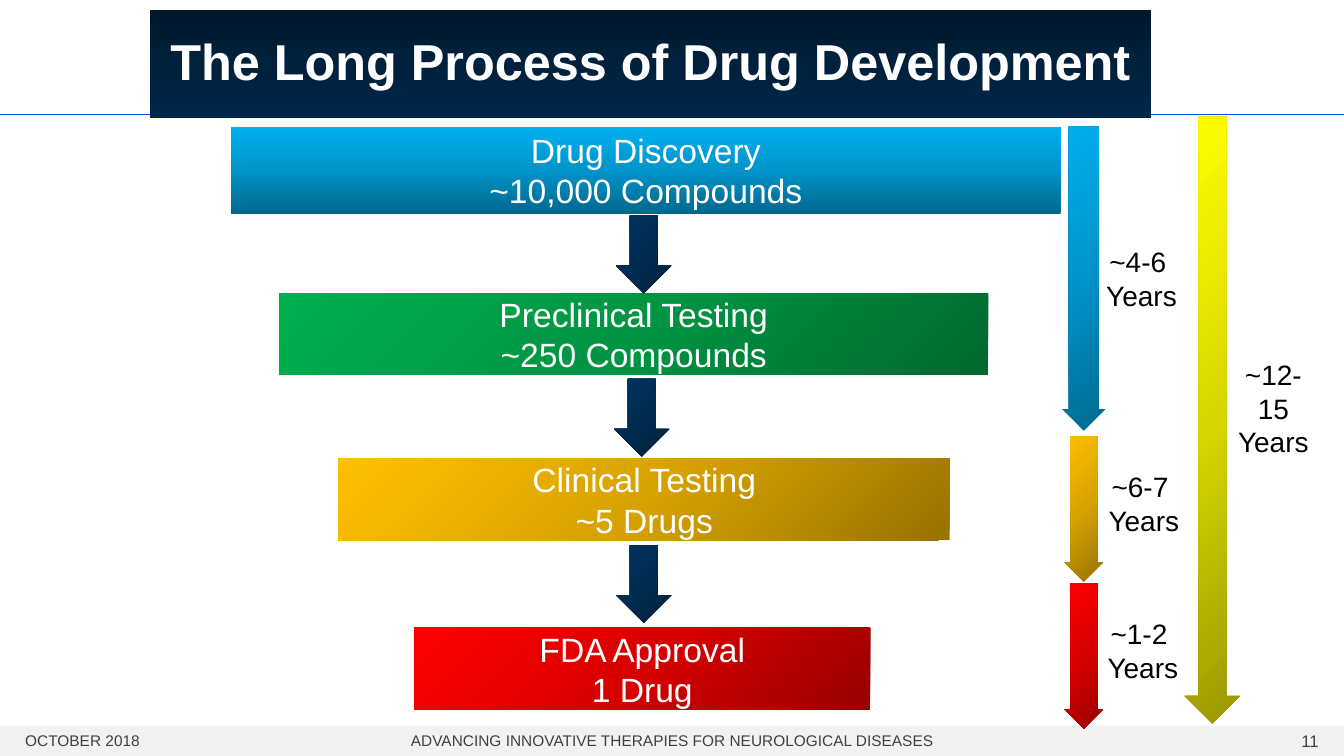
"""Build the drug development funnel slide with its timeline arrows."""
from copy import deepcopy
from dataclasses import dataclass

from pptx import Presentation
from pptx.dml.color import RGBColor
from pptx.enum.shapes import MSO_CONNECTOR, MSO_SHAPE
from pptx.enum.text import MSO_ANCHOR as ANCHOR, PP_ALIGN as ALIGN
from pptx.oxml.ns import qn
from pptx.oxml.xmlchemy import OxmlElement
from pptx.util import Inches, Pt


@dataclass(frozen=True)
class Theme:
    font: str = "Arial"
    title: int = 36
    stage: int = 24
    years: int = 20
    number: int = 12
    footer: int = 11
    white: str = "FFFFFF"
    black: str = "000000"
    grey: str = "404040"
    band: str = "F2F2F2"
    rule: str = "094DFF"
    title_fill: tuple = ("00172B", "00213D", "002749")
    navy: tuple = ("001F39", "002C52", "003461")
    blue: tuple = ("00688E", "0094CA", "00B0F0")
    green: tuple = ("00682F", "009443", "00B050")
    gold: tuple = ("977200", "D7A200", "FFC000")
    red: tuple = ("970000", "D70000", "FF0000")
    yellow: tuple = ("979700", "D7D700", "FFFF00")


T = Theme()
WIDTH, HEIGHT = 13.33, 7.5
BAND_TOP, BAND_H = 7.2, 0.3
RULE_Y = 1.13
DOWN, UP, DIAGONAL = 270, 90, 135

TITLE = "The Long Process of Drug Development"
TITLE_BOX = (1.49, 0.1, 9.93, 1.07)
STAGES = [
    (("Drug Discovery", "~10,000 Compounds"), (2.29, 1.26, 8.23, 0.86), T.blue, UP),
    (("Preclinical Testing", "~250 Compounds"), (2.77, 2.91, 7.03, 0.81), T.green, DIAGONAL),
    (("Clinical Testing", "~5 Drugs"), (3.36, 4.55, 6.06, 0.81), T.gold, DIAGONAL),
    (("FDA Approval", "1 Drug"), (4.11, 6.23, 4.52, 0.81), T.red, DIAGONAL),
]
STEP_SIZE = (0.55, 0.77)
STEPS = [(6.11, 2.14), (6.09, 3.76), (6.11, 5.41)]
SPANS = [
    ((10.54, 1.26, 0.42, 3.01), T.blue, 0.702),
    ((10.56, 4.33, 0.38, 1.44), T.gold, 0.702),
    ((10.56, 5.79, 0.38, 1.44), T.red, 0.702),
    ((11.75, 1.16, 0.55, 6.02), T.yellow, 0.5),
]
YEARS_H = 0.77
YEARS = [
    (("~4-6", " Years"), 10.59, 2.38, 1.39),
    (("~6-7 ", "Years"), 10.49, 4.61, 1.71),
    (("~1-2 ", "Years"), 10.59, 6.07, 1.49),
    (("~12-15", "Years"), 12.13, 3.5, 1),
]
FOOTERS = [
    ("OCTOBER 2018", 0.25, 2, ALIGN.LEFT, T.footer),
    ("ADVANCING INNOVATIVE THERAPIES FOR NEUROLOGICAL DISEASES", 3.17, 7, ALIGN.CENTER, T.footer),
    ("11", 11.08, 2, ALIGN.RIGHT, T.number),
]


def inches(box):
    return [Inches(v) for v in box]


def write(sp, lines, size, color, align=ALIGN.CENTER, anchor=ANCHOR.MIDDLE, inset=None, bold=False):
    tf = sp.text_frame
    tf.word_wrap = True
    tf.vertical_anchor = anchor
    if inset is not None:
        tf.margin_left = tf.margin_right = tf.margin_top = tf.margin_bottom = inset
    for i, line in enumerate(lines):
        p = tf.add_paragraph() if i else tf.paragraphs[0]
        p.text = line
        p.alignment = align
        p.font.name, p.font.size, p.font.bold = T.font, Pt(size), bold
        p.font.color.rgb = RGBColor.from_string(color)


def shade(sp, colors, angle):
    sp.fill.gradient()
    sp.fill.gradient_angle = angle
    stops = sp._element.spPr.find(qn("a:gradFill")).find(qn("a:gsLst"))
    stops.append(deepcopy(stops[-1]))
    for i, (stop, color) in enumerate(zip(sp.fill.gradient_stops, colors)):
        stop.position = i / 2
        stop.color.rgb = RGBColor.from_string(color)


def add_plain(s, kind, box):
    sp = s.shapes.add_shape(kind, *inches(box))
    sp.shadow.inherit = False
    sp.line.fill.background()
    return sp


def add_arrow(s, box, colors, shaft=0.5):
    sp = add_plain(s, MSO_SHAPE.DOWN_ARROW, box)
    sp.adjustments[0] = shaft
    sp.adjustments[1] = 0.5
    shade(sp, colors, DIAGONAL)


def add_frame(s):
    band = add_plain(s, MSO_SHAPE.RECTANGLE, (0, BAND_TOP, WIDTH, BAND_H))
    band.fill.solid()
    band.fill.fore_color.rgb = RGBColor.from_string(T.band)
    rule = s.shapes.add_connector(MSO_CONNECTOR.STRAIGHT, *inches((0, RULE_Y, WIDTH, RULE_Y)))
    rule.line.color.rgb = RGBColor.from_string(T.rule)
    rule.line.width = Pt(0.5)
    rule._element.spPr.append(OxmlElement("a:effectLst"))
    for text, left, width, align, size in FOOTERS:
        sp = s.shapes.add_textbox(*inches((left, BAND_TOP, width, BAND_H)))
        write(sp, [text], size, T.grey, align, inset=0)


def add_title(s):
    title = s.shapes.title
    title.left, title.top, title.width, title.height = inches(TITLE_BOX)
    shade(title, T.title_fill, DOWN)
    write(title, [TITLE], T.title, T.white, inset=0, bold=True)
    title.text_frame.paragraphs[0].line_spacing = 0.9
    s.shapes._spTree.append(title._element)


def main():
    prs = Presentation()
    prs.slide_width, prs.slide_height = inches((WIDTH, HEIGHT))
    s = prs.slides.add_slide(prs.slide_layouts.get_by_name("Title Only"))
    add_frame(s)
    add_title(s)
    for lines, box, colors, angle in STAGES:
        sp = add_plain(s, MSO_SHAPE.RECTANGLE, box)
        shade(sp, colors, angle)
        write(sp, lines, T.stage, T.white)
    for corner in STEPS:
        add_arrow(s, corner + STEP_SIZE, T.navy)
    for box, colors, shaft in SPANS:
        add_arrow(s, box, colors, shaft)
    for lines, left, top, width in YEARS:
        sp = s.shapes.add_textbox(*inches((left, top, width, YEARS_H)))
        write(sp, lines, T.years, T.black, anchor=ANCHOR.TOP)
    prs.save("out.pptx")


if __name__ == "__main__":
    main()
